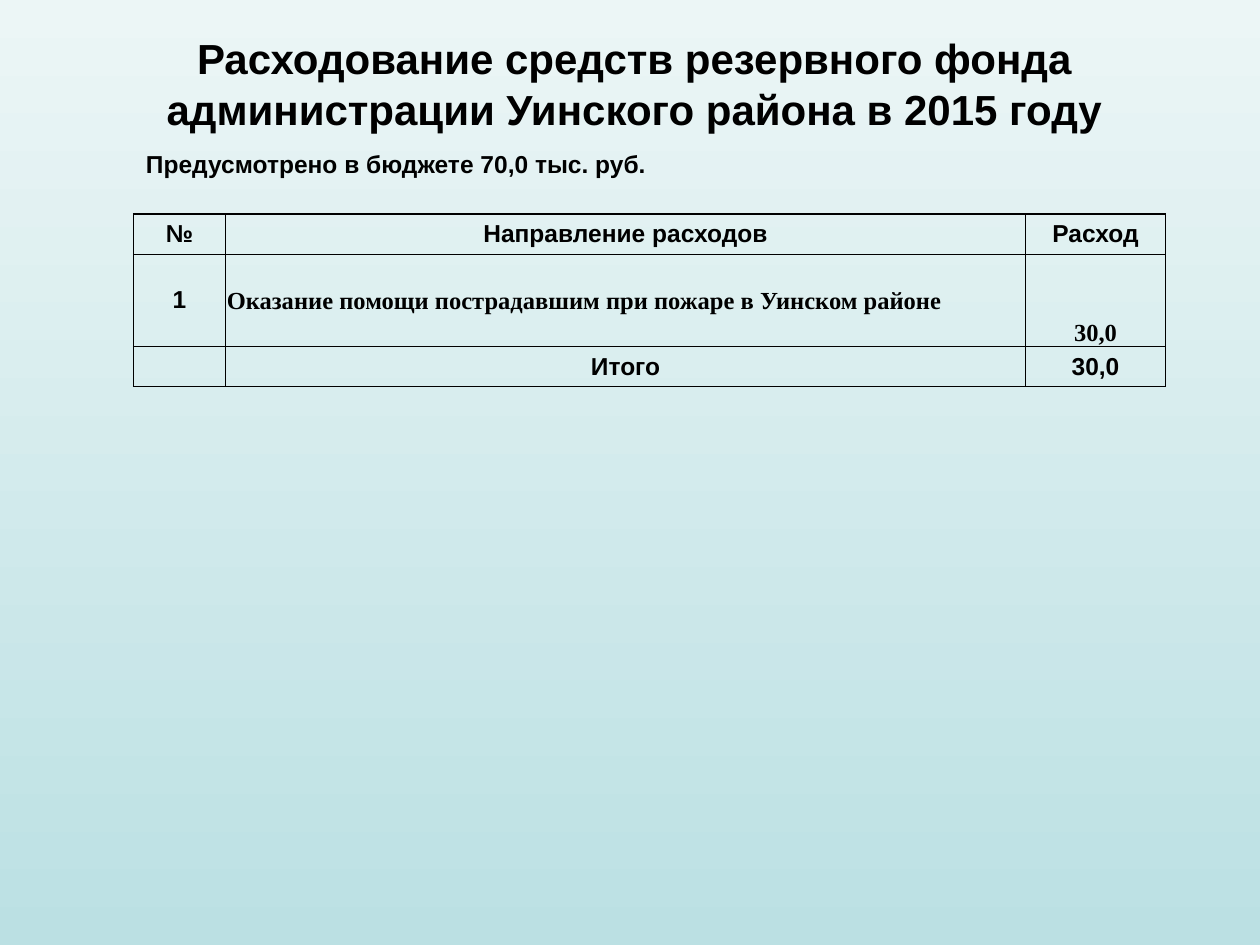
from lxml import etree
from pptx import Presentation
from pptx.dml.color import RGBColor
from pptx.enum.text import MSO_ANCHOR, PP_ALIGN
from pptx.oxml.ns import qn
from pptx.util import Inches, Pt

LEFT, CENTER = PP_ALIGN.LEFT, PP_ALIGN.CENTER
MIDDLE, BOTTOM = MSO_ANCHOR.MIDDLE, MSO_ANCHOR.BOTTOM
SANS, SERIF = "Arial", "Times New Roman"
BLACK = "000000"

COLUMN_WIDTHS = [0.73, 6.35, 1.11]
ROW_HEIGHTS = [0.32, 0.73, 0.32]
ROWS = [
    ["№", "Направление расходов", "Расход"],
    ["1", "Оказание помощи пострадавшим при пожаре в Уинском районе", "30,0"],
    ["", "Итого", "30,0"],
]
SERIF_CELLS = {(1, 1): (LEFT, MIDDLE), (1, 2): (CENTER, BOTTOM)}


def color(value):
    return RGBColor.from_string(value)


def write(para, text, size, align, face=SANS):
    para.text = text
    para.alignment = align
    font = para.font
    font.name, font.size, font.bold = face, Pt(size), True
    font.color.rgb = color(BLACK)


def paint_background(page):
    fill = page.background.fill
    fill.gradient()
    fill.gradient_angle = 270
    for stop, value in zip(fill.gradient_stops, ["ECF6F6", "BBE0E3"]):
        stop.color.rgb = color(value)


def add_heading(page, left, top, width, height):
    box = page.shapes.add_textbox(Inches(left), Inches(top), Inches(width), Inches(height))
    frame = box.text_frame
    frame.word_wrap = True
    write(frame.paragraphs[0],
          "Расходование средств резервного фонда администрации Уинского района в 2015 году",
          24, CENTER)
    para = frame.add_paragraph()
    write(para, "Предусмотрено в бюджете 70,0 тыс. руб.", 14, LEFT)
    para.space_before = Pt(9)


def draw_borders(cell):
    properties = cell._tc.get_or_add_tcPr()
    for side in ("a:lnL", "a:lnR", "a:lnT", "a:lnB"):
        line = etree.SubElement(properties, qn(side), w=str(Pt(1)))
        fill = etree.SubElement(line, qn("a:solidFill"))
        etree.SubElement(fill, qn("a:srgbClr"), val=BLACK)


def add_expenses(page, left, top):
    table = page.shapes.add_table(
        len(ROWS), len(COLUMN_WIDTHS), Inches(left), Inches(top),
        Inches(sum(COLUMN_WIDTHS)), Inches(sum(ROW_HEIGHTS))).table
    table.horz_banding = False
    for column, width in zip(table.columns, COLUMN_WIDTHS):
        column.width = Inches(width)
    for row, height in zip(table.rows, ROW_HEIGHTS):
        row.height = Inches(height)
    for r, texts in enumerate(ROWS):
        for c, text in enumerate(texts):
            cell = table.cell(r, c)
            draw_borders(cell)
            cell.fill.background()
            align, anchor = SERIF_CELLS.get((r, c), (CENTER, MIDDLE))
            cell.vertical_anchor = anchor
            face = SANS
            if (r, c) in SERIF_CELLS:
                face = SERIF
                cell.margin_left = cell.margin_right = cell.margin_top = Inches(0.01)
                cell.margin_bottom = Inches(0)
            write(cell.text_frame.paragraphs[0], text, 14, align, face)


def main():
    deck = Presentation()
    deck.slide_width, deck.slide_height = Inches(10), Inches(7.5)
    page = deck.slides.add_slide(deck.slide_layouts[6])
    paint_background(page)
    add_expenses(page, 1.06, 1.7)
    add_heading(page, 1.06, 0.21, 7.95, 1.26)
    deck.save("out.pptx")


if __name__ == "__main__":
    main()
